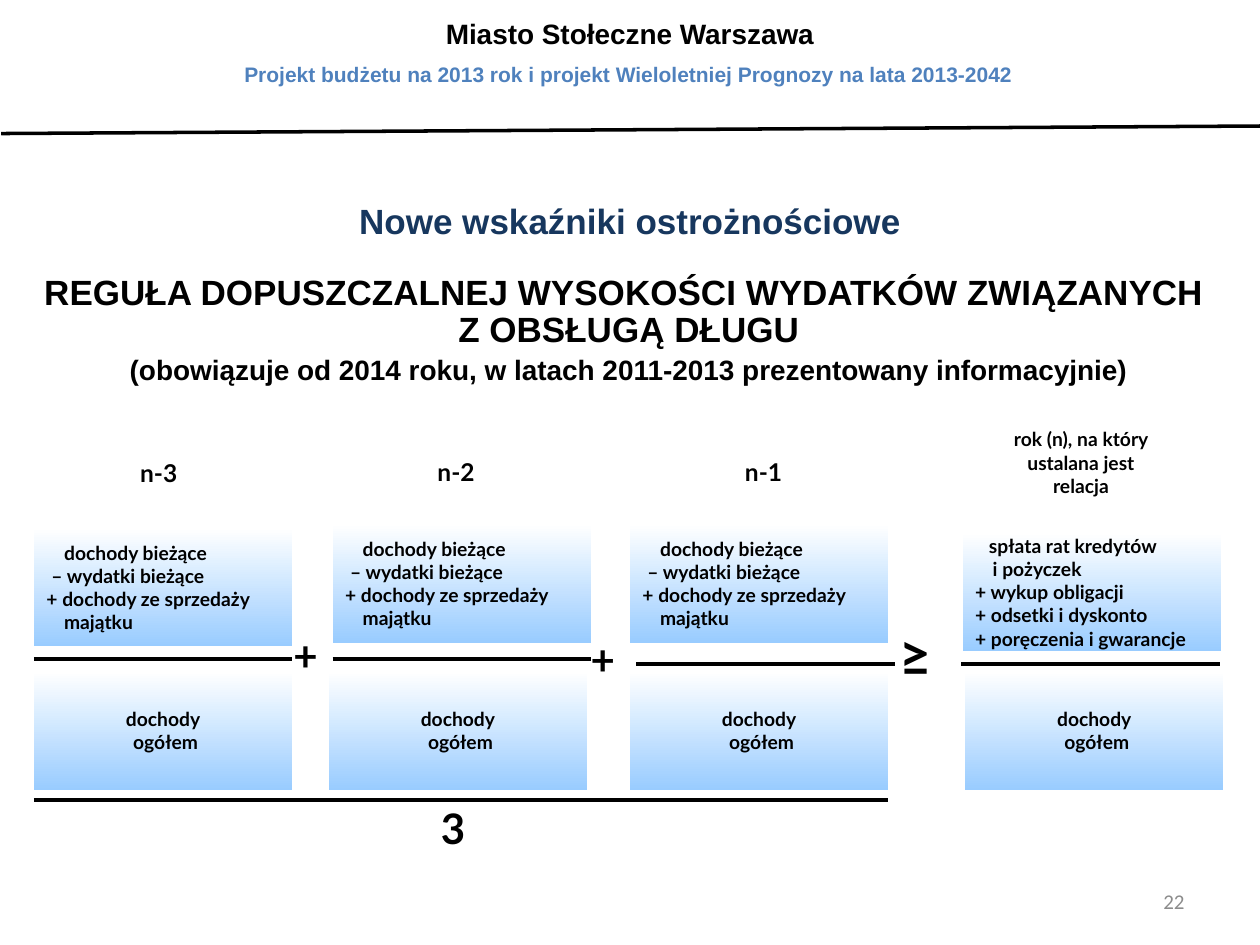
from dataclasses import dataclass

from lxml.etree import SubElement
from pptx import Presentation
from pptx.dml.color import RGBColor as Rgb
from pptx.enum.shapes import MSO_CONNECTOR as Connector, MSO_SHAPE as Shape
from pptx.enum.text import MSO_ANCHOR as Anchor, MSO_AUTO_SIZE as AutoSize, PP_ALIGN as Align
from pptx.oxml.ns import qn
from pptx.util import Inches, Pt


@dataclass(frozen=True)
class Theme:
    black: Rgb = Rgb(0, 0, 0)
    white: Rgb = Rgb(255, 255, 255)
    sky: Rgb = Rgb.from_string("99CCFF")
    blue: Rgb = Rgb.from_string("4F81BD")
    navy: Rgb = Rgb.from_string("17375E")
    grey: Rgb = Rgb.from_string("8C8C8C")
    heading_font: str = "Arial"
    formula_font: str = "Lato"
    number_font: str = "Calibri"
    title: int = 20
    header: int = 16
    year: int = 14
    small: int = 12
    term: int = 11
    sign: int = 24
    relation: int = 32


theme = Theme()
deck = Presentation()
deck.slide_width, deck.slide_height = Inches(10), Inches(7.5)
page = deck.slides.add_slide(deck.slide_layouts[6])


def write(box, lines, size, font=theme.formula_font, color=theme.black,
          bold=True, align=Align.LEFT, anchor=Anchor.MIDDLE):
    """Fill a box with one paragraph per (text, indent in inches) pair."""
    frame = box.text_frame
    frame.word_wrap = True
    frame.vertical_anchor = anchor
    frame.text = "\n".join(text for text, _ in lines)
    for para, (_, indent) in zip(frame.paragraphs, lines):
        para.alignment = align
        if indent:
            para._p.get_or_add_pPr().set("marL", str(Inches(indent)))
        for span in para.runs:
            span.font.name, span.font.size = font, Pt(size)
            span.font.bold, span.font.color.rgb = bold, color
    return frame


def draw_line(x1, y1, x2, y2, width=2.5):
    line = page.shapes.add_connector(
        Connector.STRAIGHT, Inches(x1), Inches(y1), Inches(x2), Inches(y2))
    line.line.color.rgb, line.line.width = theme.black, Pt(width)
    SubElement(line._element.spPr, qn("a:effectLst"))


# Headings across the full width: text, left, top, height, size, colour, spacing, leading
headings = [
    ("Miasto Stołeczne Warszawa", 0, 0.08, 0.37, theme.header, theme.black, 0, None),
    ("Projekt budżetu na 2013 rok i projekt Wieloletniej Prognozy na lata 2013-2042",
     -0.01, 0.44, 0.55, theme.small, theme.blue, 3, None),
    ("Nowe wskaźniki ostrożnościowe", 0, 1.58, 0.4, theme.title, theme.navy, 12, 21),
    ("REGUŁA DOPUSZCZALNEJ WYSOKOŚCI WYDATKÓW ZWIĄZANYCH \vZ OBSŁUGĄ DŁUGU\v"
     "(obowiązuje od 2014 roku, w latach 2011-2013 prezentowany informacyjnie)",
     -0.01, 2.14, 0.98, theme.title, theme.black, 12, 21),
]
for text, left, top, height, size, color, spacing, leading in headings:
    box = page.shapes.add_textbox(Inches(left), Inches(top), deck.slide_width, Inches(height))
    frame = write(box, [(text, 0)], size, theme.heading_font, color,
                  align=Align.CENTER, anchor=Anchor.TOP)
    frame.auto_size = AutoSize.SHAPE_TO_FIT_TEXT
    para = frame.paragraphs[0]
    para.space_before = para.space_after = Pt(spacing)
    if leading:
        para.line_spacing = Pt(leading)
# The validity note closes the rule's heading in a smaller size
para.runs[-1].font.size = Pt(theme.header)
draw_line(0.01, 1.06, 10.01, 1, width=2)

# Four fractions, each with a numerator, a bar and a denominator
term_width, term_height, denominator_top = 2.05, 0.94, 5.33
surplus = [("dochody bieżące", 0.14), ("– wydatki bieżące", 0.04),
           ("+ dochody ze sprzedaży", 0), ("majątku", 0.14)]
repayment = [("spłata rat kredytów", 0.11), ("i pożyczek", 0.14), ("+ wykup obligacji", 0),
             ("+ odsetki i dyskonto", 0), ("+ poręczenia i gwarancje", 0)]
income = [("dochody", 0), ("ogółem", 0.04)]
# numerator, numerator left and top, denominator left, bar left and top
fractions = [
    (surplus, 0.27, 4.19, 0.27, 0.27, 5.23),
    (surplus, 2.64, 4.16, 2.61, 2.64, 5.23),
    (surplus, 5, 4.16, 5, 5.05, 5.27),
    (repayment, 7.64, 4.23, 7.66, 7.63, 5.27),
]
for numerator, left, top, denominator_left, bar_left, bar_top in fractions:
    for lines, x, y, align in [
            (numerator, left, top, Align.LEFT),
            (income, denominator_left, denominator_top, Align.CENTER)]:
        box = page.shapes.add_shape(
            Shape.RECTANGLE, Inches(x), Inches(y), Inches(term_width), Inches(term_height))
        box.shadow.inherit = False
        box.line.fill.background()
        box.fill.gradient()
        box.fill.gradient_angle = 270
        for stop, color in zip(box.fill.gradient_stops, (theme.white, theme.sky)):
            stop.color.rgb = color
        write(box, lines, theme.term, align=align)
    draw_line(bar_left, bar_top, bar_left + term_width, bar_top)
draw_line(0.27, 6.35, 7.05, 6.35)

# Column labels and operators: text, left, top, width, height, size, alignment
labels = [
    ("n-3", 0.59, 3.58, 1.34, 0.34, theme.year, Align.CENTER),
    ("n-2", 2.95, 3.57, 1.34, 0.34, theme.year, Align.CENTER),
    ("n-1", 5.39, 3.57, 1.34, 0.34, theme.year, Align.CENTER),
    ("rok (n), na który ustalana jest relacja", 7.91, 3.34, 1.34, 0.66, theme.term, Align.CENTER),
    ("+", 2.23, 4.95, 0.47, 0.5, theme.sign, Align.LEFT),
    ("+", 4.59, 4.98, 0.47, 0.5, theme.sign, Align.LEFT),
    ("≥", 7.04, 4.88, 0.47, 0.63, theme.relation, Align.LEFT),
    ("3", 3.4, 6.32, 0.47, 0.5, theme.sign, Align.LEFT),
]
for text, left, top, width, height, size, align in labels:
    box = page.shapes.add_textbox(Inches(left), Inches(top), Inches(width), Inches(height))
    frame = write(box, [(text, 0)], size, align=align)
    frame.auto_size = AutoSize.SHAPE_TO_FIT_TEXT

page_number = page.shapes.add_textbox(Inches(7.17), Inches(6.95), Inches(2.33), Inches(0.4))
write(page_number, [("22", 0)], theme.small, theme.number_font, theme.grey,
      bold=False, align=Align.RIGHT)

deck.save("out.pptx")
